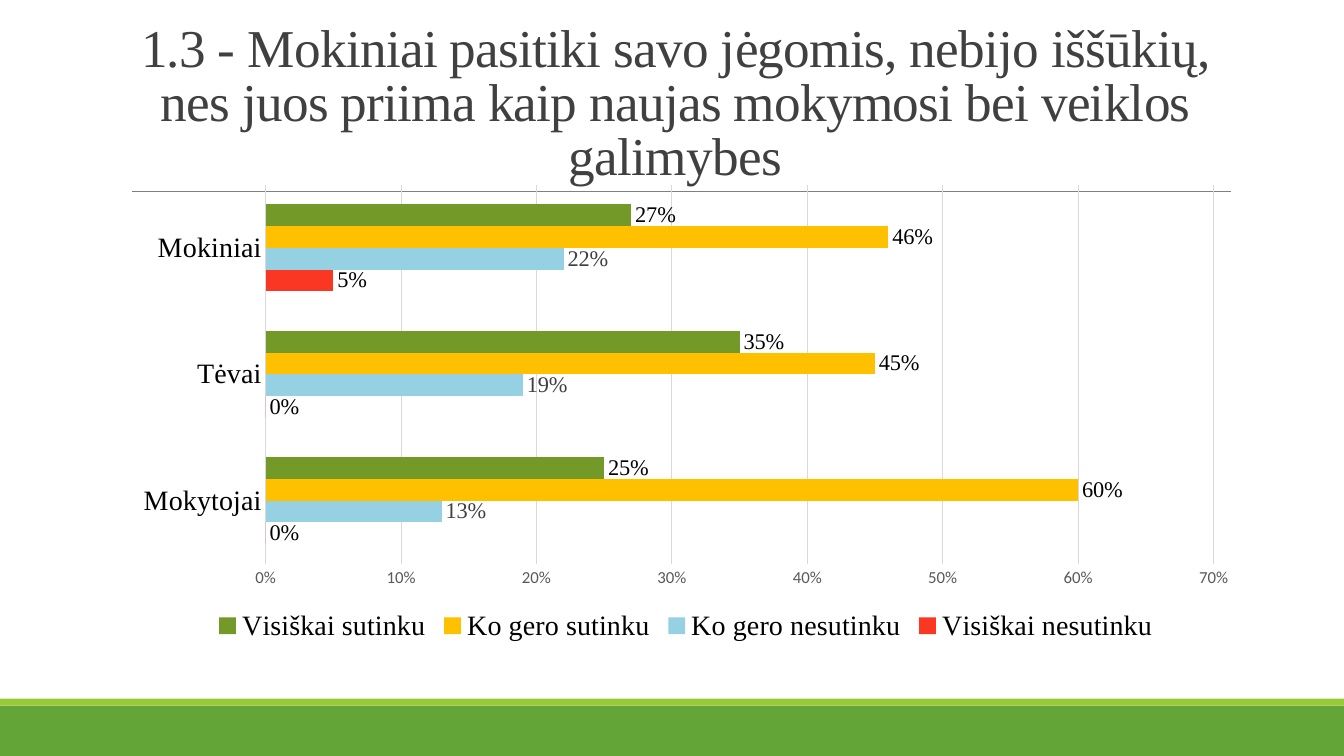
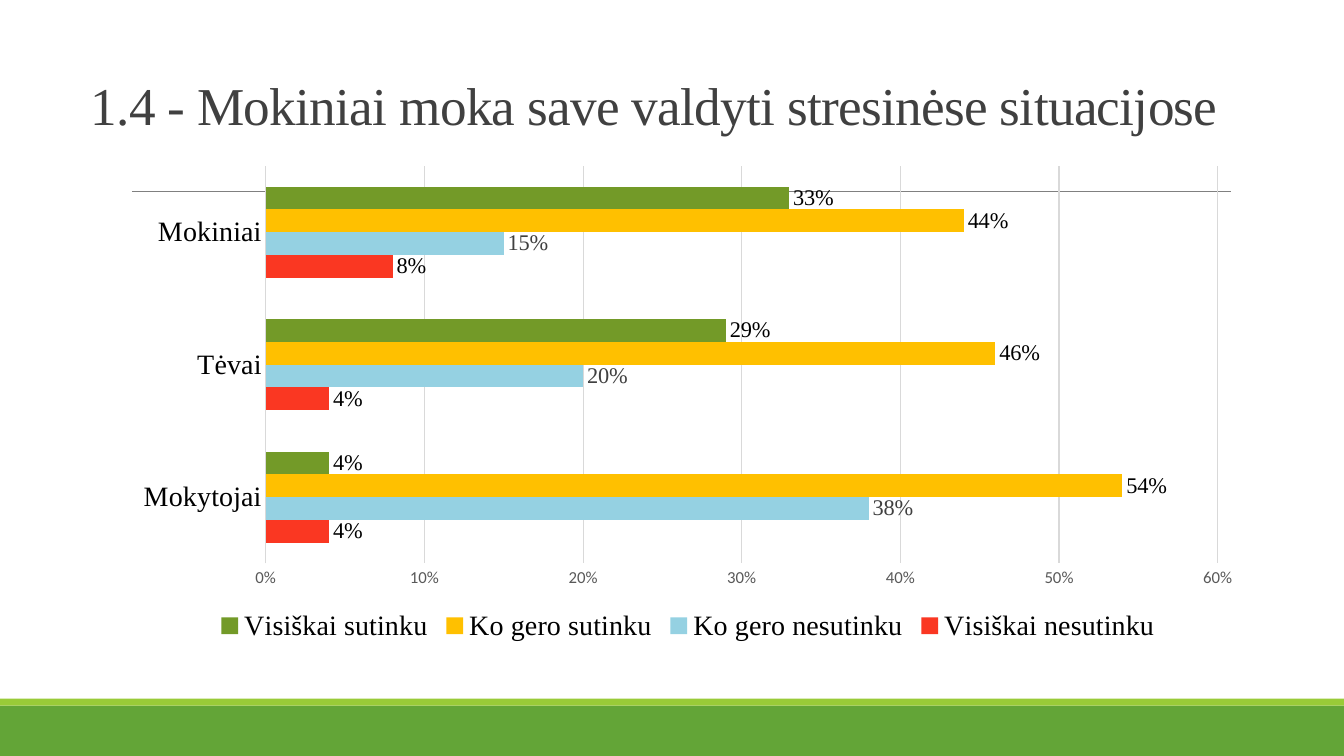
import lxml.etree
import pptx
import pptx.chart.data
import pptx.dml.color
import pptx.enum.chart
import pptx.enum.shapes
import pptx.enum.text
import pptx.oxml.ns
import pptx.util

Pt = pptx.util.Pt
RGBColor = pptx.dml.color.RGBColor
PP_ALIGN = pptx.enum.text.PP_ALIGN
XL_TICK_MARK = pptx.enum.chart.XL_TICK_MARK

# Shared style
GREEN = RGBColor(0x63, 0xA5, 0x37)
LIME = RGBColor(0x99, 0xCB, 0x38)
RULE_GRAY = RGBColor(0x80, 0x80, 0x80)
GRID_GRAY = RGBColor(0xD9, 0xD9, 0xD9)
AXIS_GRAY = RGBColor(0x59, 0x59, 0x59)
DARK = RGBColor(0x40, 0x40, 0x40)
BLACK = RGBColor(0, 0, 0)
SERIF = "Times New Roman"
SANS = "Calibri"
SLIDE_WIDTH, SLIDE_HEIGHT = 960, 540

# Footer bands: top, height, colour
BANDS = [(504, 36, GREEN), (499, 5, LIME)]

# Answers, bottom bar first: name, bar colour, label colour
ANSWERS = [
    ("Visiškai nesutinku", RGBColor(0xFA, 0x37, 0x22), BLACK),
    ("Ko gero nesutinku", RGBColor(0x95, 0xD1, 0xE2), DARK),
    ("Ko gero sutinku", RGBColor(0xFF, 0xC0, 0x00), BLACK),
    ("Visiškai sutinku", RGBColor(0x73, 0x9A, 0x28), BLACK),
]
GROUPS = ["Mokytojai", "Tėvai", "Mokiniai"]

# One entry per slide; boxes are left, top, width, height
QUESTIONS = [
    {
        "title": "1.3 - Mokiniai pasitiki savo jėgomis, nebijo iššūkių, "
                 "nes juos priima kaip naujas mokymosi bei veiklos galimybes",
        "title_box": (86.4, 22.3, 792, 114.5),
        "align": PP_ALIGN.CENTER,
        "chart_box": (86.4, 125.3, 807, 337),
        "axis_max": 0.7,
        "shares": [(0, 0, 0.05), (0.13, 0.19, 0.22),
                   (0.6, 0.45, 0.46), (0.25, 0.35, 0.27)],
    },
    {
        "title": "1.4 - Mokiniai moka save valdyti stresinėse situacijose",
        "title_box": (57.6, 22.3, 838.8, 78.5),
        "align": PP_ALIGN.LEFT,
        "chart_box": (86.4, 111.6, 810, 350.7),
        "axis_max": 0.6,
        "shares": [(0.04, 0.04, 0.08), (0.38, 0.2, 0.15),
                   (0.54, 0.46, 0.44), (0.04, 0.29, 0.33)],
    },
]


def style_font(font, name, size, color):
    font.name = name
    font.size = Pt(size)
    font.bold = False
    font.color.rgb = color


deck = pptx.Presentation()
deck.slide_width, deck.slide_height = Pt(SLIDE_WIDTH), Pt(SLIDE_HEIGHT)

for question in QUESTIONS:
    slide = deck.slides.add_slide(deck.slide_layouts[6])

    # Footer bands
    for top, height, color in BANDS:
        band = slide.shapes.add_shape(
            pptx.enum.shapes.MSO_SHAPE.RECTANGLE,
            Pt(0), Pt(top), Pt(SLIDE_WIDTH), Pt(height))
        band.shadow.inherit = False
        band.fill.solid()
        band.fill.fore_color.rgb = color
        band.line.fill.background()

    # Rule under the title
    rule = slide.shapes.add_connector(
        pptx.enum.shapes.MSO_CONNECTOR.STRAIGHT,
        Pt(94.3), Pt(136.8), Pt(879), Pt(136.8))
    rule.line.color.rgb = RULE_GRAY
    rule.line.width = Pt(0.5)
    lxml.etree.SubElement(rule._element.spPr, pptx.oxml.ns.qn("a:effectLst"))

    # Title
    title = slide.shapes.add_textbox(*map(Pt, question["title_box"])).text_frame
    title.word_wrap = True
    title.vertical_anchor = pptx.enum.text.MSO_ANCHOR.BOTTOM
    title.text = question["title"]
    heading = title.paragraphs[0]
    heading.alignment = question["align"]
    heading.line_spacing = 0.85
    style_font(heading.runs[0].font, SERIF, 38, DARK)
    heading.runs[0].font._element.set("spc", "-50")

    # Chart of answers by group
    survey = pptx.chart.data.CategoryChartData(number_format="0%")
    survey.categories = GROUPS
    for (name, _, _), shares in zip(ANSWERS, question["shares"]):
        survey.add_series(name, shares)
    chart = slide.shapes.add_chart(
        pptx.enum.chart.XL_CHART_TYPE.BAR_CLUSTERED,
        *map(Pt, question["chart_box"]), survey).chart
    chart.has_title = False
    style_font(chart.font, SANS, 10, BLACK)

    # Bars and their labels
    plot = chart.plots[0]
    plot.gap_width = 182
    plot.vary_by_categories = False
    for series, (_, bar_color, label_color) in zip(plot.series, ANSWERS):
        series.format.fill.solid()
        series.format.fill.fore_color.rgb = bar_color
        labels = series.data_labels
        labels.show_value = True
        labels.number_format = "0%"
        labels.number_format_is_linked = False
        labels.position = pptx.enum.chart.XL_LABEL_POSITION.OUTSIDE_END
        style_font(labels.font, SERIF, 16, label_color)

    # Axes
    for axis in (chart.category_axis, chart.value_axis):
        axis.major_tick_mark = XL_TICK_MARK.NONE
        axis.minor_tick_mark = XL_TICK_MARK.NONE
    groups_axis, share_axis = chart.category_axis, chart.value_axis
    style_font(groups_axis.tick_labels.font, SERIF, 20, BLACK)
    groups_axis.format.line.color.rgb = GRID_GRAY
    groups_axis.format.line.width = Pt(0.75)

    style_font(share_axis.tick_labels.font, SANS, 12, AXIS_GRAY)
    share_axis.tick_labels.number_format = "0%"
    share_axis.tick_labels.number_format_is_linked = False
    share_axis.minimum_scale = 0
    share_axis.maximum_scale = question["axis_max"]
    share_axis.major_unit = 0.1
    share_axis.format.line.fill.background()
    share_axis.has_major_gridlines = True
    share_axis.major_gridlines.format.line.color.rgb = GRID_GRAY
    share_axis.major_gridlines.format.line.width = Pt(0.75)

    # Legend
    chart.has_legend = True
    chart.legend.position = pptx.enum.chart.XL_LEGEND_POSITION.BOTTOM
    chart.legend.include_in_layout = False
    style_font(chart.legend.font, SERIF, 20, BLACK)

deck.save("out.pptx")
